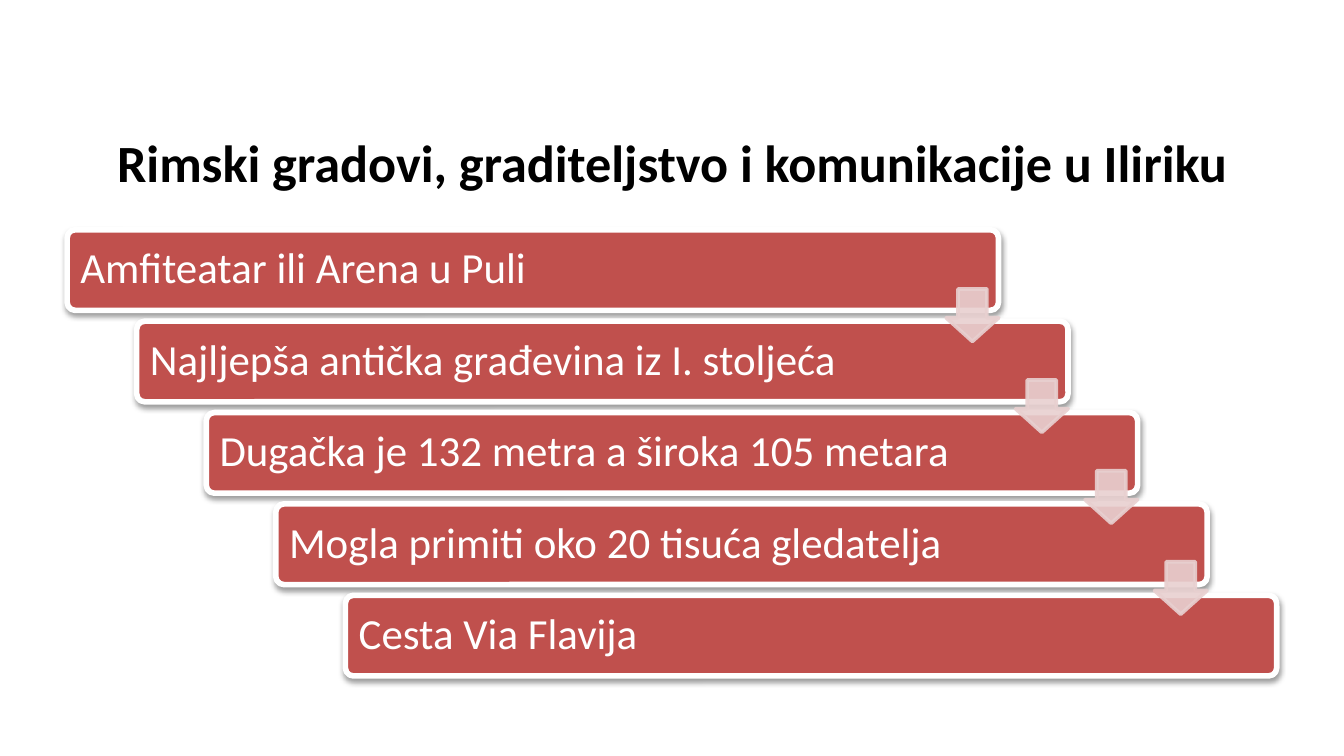
from dataclasses import dataclass

from lxml import etree
from pptx import Presentation
from pptx.dml.color import RGBColor
from pptx.enum import shapes, text
from pptx.oxml import ns
from pptx.util import Inches, Pt

BLACK = RGBColor(0x00, 0x00, 0x00)
WHITE = RGBColor(0xFF, 0xFF, 0xFF)
BRICK = RGBColor(0xC0, 0x50, 0x4D)
BLUSH = RGBColor(0xE8, 0xD0, 0xD0)

TITLE = "Rimski gradovi, graditeljstvo i komunikacije u Iliriku"
FACTS = [
    "Amfiteatar ili Arena u Puli",
    "Najljepša antička građevina iz I. stoljeća",
    "Dugačka je 132 metra a široka 105 metara",
    "Mogla primiti oko 20 tisuća gledatelja",
    "Cesta Via Flavija",
]


@dataclass(frozen=True)
class Box:
    left: float
    top: float
    width: float
    height: float

    def emu(self) -> tuple:
        return tuple(Inches(v) for v in (self.left, self.top, self.width, self.height))


@dataclass(frozen=True)
class Staircase:
    """Equal boxes spread evenly from the first one to the last corner."""
    first: Box
    last_left: float
    last_top: float
    count: int

    def step(self, index: int) -> Box:
        first = self.first
        share = index / (self.count - 1)
        return Box(first.left + share * (self.last_left - first.left),
                   first.top + share * (self.last_top - first.top),
                   first.width, first.height)


BARS = Staircase(Box(0.5, 1.71, 6.93, 0.6), 2.57, 4.43, len(FACTS))
ARROWS = Staircase(Box(7.04, 2.15, 0.39, 0.39), 8.59, 4.18, len(FACTS) - 1)
FIRST_LABEL_WIDTH, LABEL_WIDTH = 6.25, 6.02


def add_outline_shape(slide, kind, box: Box, adjustments: list, fill: RGBColor,
                      outline: RGBColor, outline_width: float):
    shape = slide.shapes.add_shape(kind, *box.emu())
    for index, value in enumerate(adjustments):
        shape.adjustments[index] = value
    shape.shadow.inherit = False
    shape.fill.solid()
    shape.fill.fore_color.rgb = fill
    shape.line.color.rgb = outline
    shape.line.width = Pt(outline_width)
    return shape


def add_soft_shadow(shape) -> None:
    effects = shape.element.spPr.find(ns.qn("a:effectLst"))
    shadow = etree.SubElement(effects, ns.qn("a:outerShdw"), blurRad=str(Pt(3.1)),
                              dist=str(Pt(1.6)), dir="5400000", rotWithShape="0")
    color = etree.SubElement(shadow, ns.qn("a:srgbClr"), val=str(BLACK))
    etree.SubElement(color, ns.qn("a:alpha"), val="38000")


def set_opacity(shape, percent: int) -> None:
    """Apply the opacity to the fill and the outline."""
    for color in shape.element.spPr.iter(ns.qn("a:srgbClr")):
        etree.SubElement(color, ns.qn("a:alpha"), val=str(percent * 1000))


def add_label(slide, box: Box, wording: str, size: float, color: RGBColor,
              align: text.PP_ALIGN, bold: bool = False) -> None:
    frame = slide.shapes.add_textbox(*box.emu()).text_frame
    frame.word_wrap = True
    frame.vertical_anchor = text.MSO_ANCHOR.MIDDLE
    frame.margin_left = frame.margin_right = Inches(0.1)
    frame.margin_top = frame.margin_bottom = Inches(0.1)
    frame.text = wording
    paragraph = frame.paragraphs[0]
    paragraph.alignment = align
    paragraph.line_spacing = 0.9
    font = paragraph.runs[0].font
    font.name = "Calibri"
    font.size = Pt(size)
    font.bold = bold
    font.color.rgb = color


def add_fact(slide, index: int, wording: str) -> None:
    bar = BARS.step(index)
    add_soft_shadow(add_outline_shape(slide, shapes.MSO_SHAPE.ROUNDED_RECTANGLE, bar,
                                      [0.1], BRICK, WHITE, 3))
    width = LABEL_WIDTH if index else FIRST_LABEL_WIDTH
    add_label(slide, Box(bar.left, bar.top, width, bar.height), wording, 23, WHITE,
              text.PP_ALIGN.LEFT)


def add_arrow(slide, index: int) -> None:
    arrow = add_outline_shape(slide, shapes.MSO_SHAPE.DOWN_ARROW, ARROWS.step(index),
                              [0.55, 0.45], BLUSH, BLUSH, 2)
    set_opacity(arrow, 90)


def main() -> None:
    deck = Presentation()
    deck.slide_width = Inches(10)
    deck.slide_height = Inches(10 * 9 / 16)
    slide = deck.slides.add_slide(deck.slide_layouts[6])
    add_label(slide, Box(0.5, 0.84, 9, 0.78), TITLE, 28, BLACK,
              text.PP_ALIGN.CENTER, bold=True)
    for index, fact in enumerate(FACTS):
        add_fact(slide, index, fact)
    for index in range(ARROWS.count):
        add_arrow(slide, index)
    deck.save("out.pptx")


if __name__ == "__main__":
    main()
